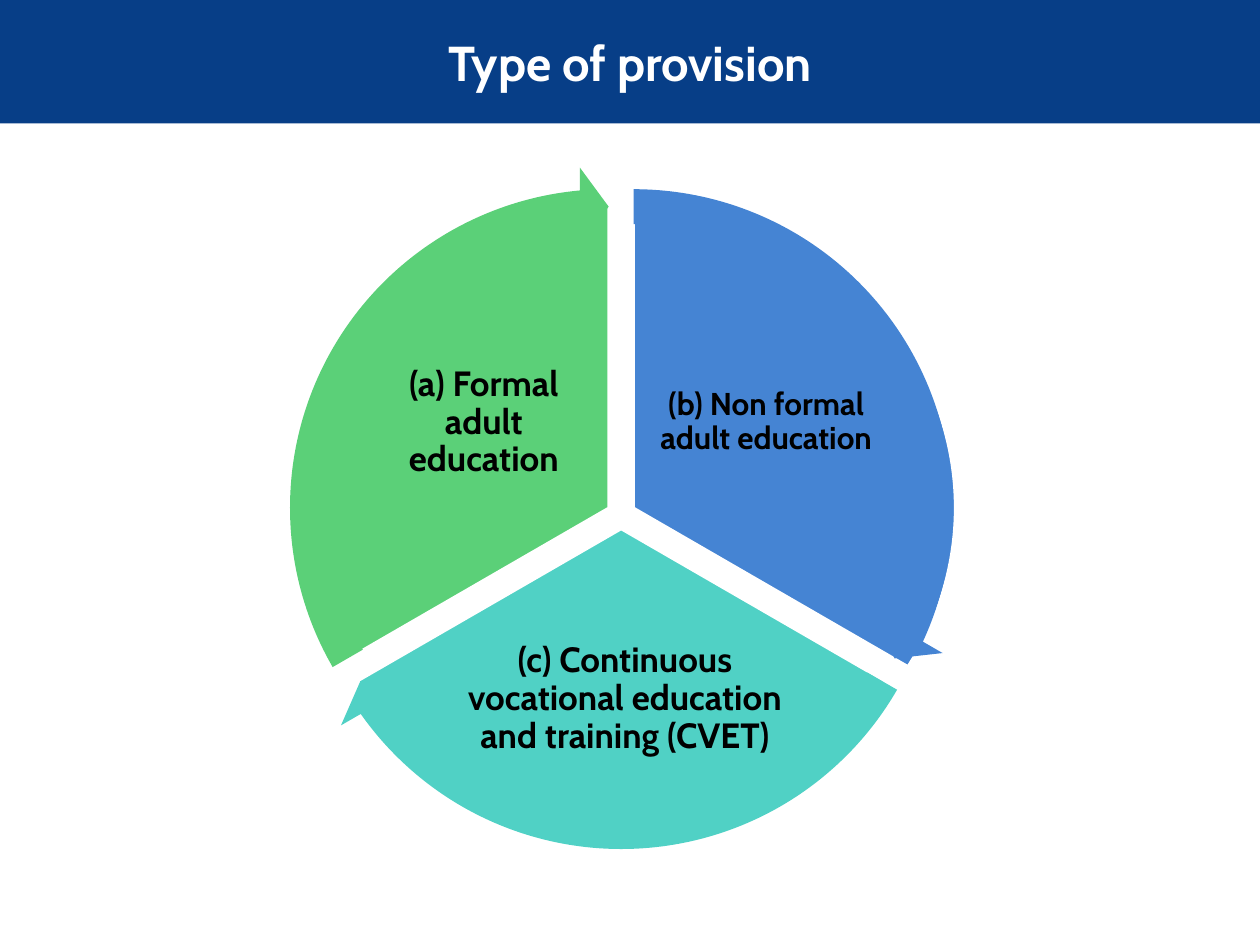
from pptx import Presentation
from pptx.dml.color import RGBColor
from pptx.enum.shapes import MSO_SHAPE as Shape
from pptx.enum.text import MSO_ANCHOR as Anchor, PP_ALIGN as Align
from pptx.util import Inches, Pt

NAVY = RGBColor(0x07, 0x3E, 0x87)
BLUE = RGBColor(0x45, 0x84, 0xD3)
TEAL = RGBColor(0x50, 0xD1, 0xC5)
GREEN = RGBColor(0x5B, 0xD0, 0x78)
WHITE = RGBColor(0xFF, 0xFF, 0xFF)
BLACK = RGBColor(0, 0, 0)

TITLE = "Type of provision"
PIE_SIZE = 4.82
ARROW_SIZE = 5.42

# Boxes are left, top, width, height in inches; angles follow the preset scale
SECTORS = [
    dict(text="(b) Non formal adult education", size=18, color=BLUE,
         pie=(2.48, 1.62, 5.1, PIE_SIZE), angles=(162, 18),
         label=(5.17, 2.64, 1.82, 1.43),
         arrow=(2.32, 1.32), sweep=(14.73, 161.99)),
    dict(text="(c) Continuous vocational education and training (CVET)",
         size=20, color=TEAL,
         pie=(2.52, 1.79, PIE_SIZE, PIE_SIZE), angles=(18, 90),
         label=(3.67, 4.92, 2.58, 1.26),
         arrow=(2.22, 1.5), sweep=(86.72, 18)),
    dict(text="(a) Formal adult education", size=20, color=GREEN,
         pie=(2.42, 1.62, PIE_SIZE, PIE_SIZE), angles=(90, 162),
         label=(2.98, 2.64, 1.72, 1.43),
         arrow=(2.12, 1.32), sweep=(158.73, 90)),
]


def add_shape(page, kind, place, color, adjustments=()):
    shape = page.shapes.add_shape(kind, *map(Inches, place))
    shape.shadow.inherit = False
    shape.fill.solid()
    shape.fill.fore_color.rgb = color
    shape.line.fill.background()
    for index, value in enumerate(adjustments):
        shape.adjustments[index] = value
    return shape


def write(box, text, size, color, side, edge):
    frame = box.text_frame
    frame.word_wrap = True
    frame.vertical_anchor = Anchor.MIDDLE
    frame.margin_left = frame.margin_right = Inches(side)
    frame.margin_top = frame.margin_bottom = Inches(edge)
    para = frame.paragraphs[0]
    para.text = text
    para.alignment = Align.CENTER
    para.font.name = "Cabin"
    para.font.size = Pt(size)
    para.font.bold = True
    para.font.color.rgb = color
    return para


deck = Presentation()
deck.slide_width, deck.slide_height = Inches(10), Inches(7.5)
page = deck.slides.add_slide(deck.slide_layouts[6])

# Title band
band = add_shape(page, Shape.RECTANGLE, (0, 0, 10, 0.98), NAVY)
write(band, TITLE, 28, WHITE, 0.39, 0.05)

# Pie sectors with their labels
for sector in SECTORS:
    pie = add_shape(page, Shape.PIE, sector["pie"], sector["color"], sector["angles"])
    pie.line.color.rgb = WHITE
    pie.line.width = Pt(1.25)
    label = page.shapes.add_textbox(*map(Inches, sector["label"]))
    para = write(label, sector["text"], sector["size"], BLACK, 0.03, 0.03)
    para.line_spacing = 0.9

# Circular arrows along the rim
for sector in SECTORS:
    place = (*sector["arrow"], ARROW_SIZE, ARROW_SIZE)
    add_shape(page, Shape.CIRCULAR_ARROW, place, sector["color"],
              (0.051, 3.275, *sector["sweep"], 0.059))

deck.save("out.pptx")
